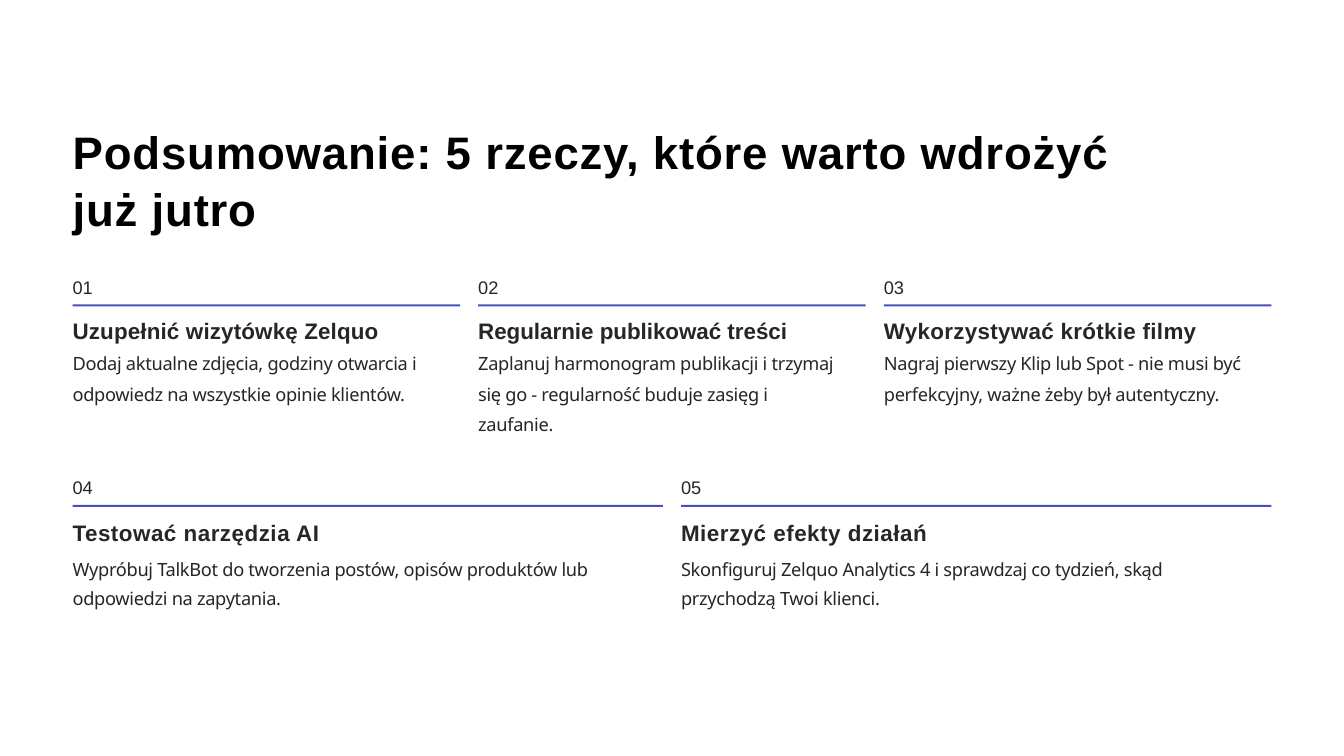
from pptx import Presentation
from pptx import util as u
from pptx.dml.color import RGBColor
from pptx.enum import shapes, text

HUES = {"title": "000000", "body": "272525", "bar": "4950BB"}

deck = Presentation()
deck.slide_width, deck.slide_height = u.Inches(13.33), u.Inches(7.5)
slide = deck.slides.add_slide(deck.slide_layouts[5])


def write(para, words, size=13, font="Arial", hue="body", bold=False,
          track=0, line=None, before=0):
    """Fill a paragraph; track is letter spacing in points."""
    para.alignment = text.PP_ALIGN.LEFT
    para.space_before = u.Pt(before)
    if line:
        para.line_spacing = line
    run = para.add_run()
    run.text = words
    run.font.size, run.font.name, run.font.bold = u.Pt(size), font, bold
    run.font.color.rgb = RGBColor.from_string(HUES[hue])
    run._r.get_or_add_rPr().set("spc", str(round(track * 100)))


def place(box, left, top, width, height, inset=0):
    """Set the box geometry and return its text frame."""
    box.left, box.top = u.Inches(left), u.Inches(top)
    box.width, box.height = u.Inches(width), u.Inches(height)
    frame = box.text_frame
    frame.word_wrap = True
    frame.auto_size = text.MSO_AUTO_SIZE.NONE
    frame.vertical_anchor = text.MSO_ANCHOR.TOP
    frame.margin_left = frame.margin_right = frame.margin_bottom = 0
    frame.margin_top = u.Inches(inset)
    return frame


# Title
frame = place(slide.shapes.title, 0.72, 1.21, 11.05, 1.13)
write(frame.paragraphs[0], "Podsumowanie: 5 rzeczy, które warto wdrożyć już jutro",
      size=32.5, hue="title", bold=True, track=0.6, line=u.Pt(40.6))

# Cards by row: heading, heading tracking, body, text width, line spacing, inset
ROWS = [
    (2.72, 0, [
        ("Uzupełnić wizytówkę Zelquo", 0.15,
         "Dodaj aktualne zdjęcia, godziny otwarcia i odpowiedz na wszystkie "
         "opinie klientów.", 3.61, 1.4, 0.06),
        ("Regularnie publikować treści", 0,
         "Zaplanuj harmonogram publikacji i trzymaj się go - regularność "
         "buduje zasięg i zaufanie.", 3.64, 1.38, 0.07),
        ("Wykorzystywać krótkie filmy", 0.25,
         "Nagraj pierwszy Klip lub Spot - nie musi być perfekcyjny, ważne "
         "żeby był autentyczny.", 3.55, 1.38, 0.07),
    ]),
    (4.71, 3.9, [
        ("Testować narzędzia AI", 0.4,
         "Wypróbuj TalkBot do tworzenia postów, opisów produktów lub "
         "odpowiedzi na zapytania.", 5.47, 1.33, 0.18),
        ("Mierzyć efekty działań", 0.4,
         "Skonfiguruj Zelquo Analytics 4 i sprawdzaj co tydzień, skąd "
         "przychodzą Twoi klienci.", 5.13, 1.33, 0.18),
    ]),
]
LEFT, SPAN, GAP = 0.72, 11.89, 0.18

count = 0
for top, before, cards in ROWS:
    width = (SPAN - GAP * (len(cards) - 1)) / len(cards)
    for col, (head, track, body, wide, line, inset) in enumerate(cards):
        count += 1
        left = LEFT + col * (width + GAP)

        # Number
        box = slide.shapes.add_textbox(0, 0, 0, 0)
        frame = place(box, left, top, 0.25, 0.24, inset=0.02)
        write(frame.paragraphs[0], f"{count:02}")

        # Rule under the number
        bar = slide.shapes.add_shape(
            shapes.MSO_SHAPE.RECTANGLE, u.Inches(left), u.Inches(top + 0.3),
            u.Inches(width), u.Inches(0.02))
        bar.shadow.inherit = False
        bar.fill.solid()
        bar.fill.fore_color.rgb = RGBColor.from_string(HUES["bar"])
        bar.line.fill.background()

        # Heading and body
        box = slide.shapes.add_textbox(0, 0, 0, 0)
        high = 1.37 if line == 1.38 else 1.08
        frame = place(box, left, top + 0.26, wide, high, inset=inset)
        write(frame.paragraphs[0], head, size=16, bold=True, track=track,
              line=None if before else line)
        write(frame.add_paragraph(), body, font="Noto Sans", track=-0.2,
              line=line, before=before)

deck.save("out.pptx")
